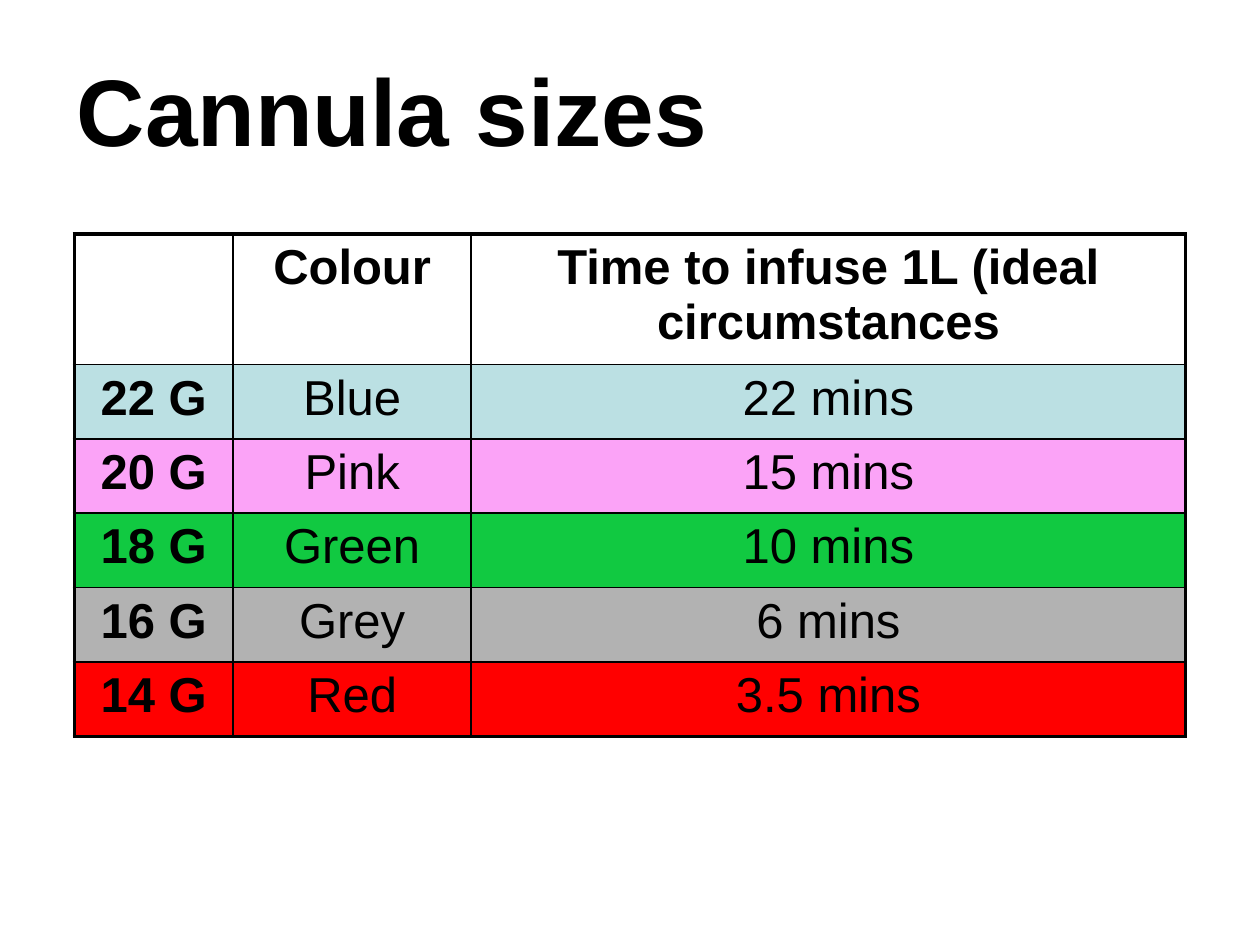
import lxml.etree
import pptx
import pptx.dml.color
import pptx.enum.text
import pptx.oxml.ns
import pptx.util

Pt = pptx.util.Pt
RGBColor = pptx.dml.color.RGBColor
qn = pptx.oxml.ns.qn

BLACK = RGBColor(0x00, 0x00, 0x00)
BLUE = RGBColor(0xBB, 0xE0, 0xE3)
PINK = RGBColor(0xFB, 0xA3, 0xF7)
GREEN = RGBColor(0x11, 0xC9, 0x41)
GREY = RGBColor(0xB2, 0xB2, 0xB2)
RED = RGBColor(0xFF, 0x00, 0x00)

FONT = "Arial"
OUTER_BORDER, INNER_BORDER = 2.25, 1
COLUMN_SHARES = (2, 3, 9)
HEADER_HEIGHT = 74

# Gauge, colour name, infusion time, row fill
CANNULAS = [
    ("", "Colour", "Time to infuse 1L (ideal circumstances", None),
    ("22 G", "Blue", "22 mins", BLUE),
    ("20 G", "Pink", "15 mins", PINK),
    ("18 G", "Green", "10 mins", GREEN),
    ("16 G", "Grey", "6 mins", GREY),
    ("14 G", "Red", "3.5 mins", RED),
]


def format_text(paragraph, size, bold):
    for run in paragraph.runs:
        run.font.name = FONT
        run.font.size = Pt(size)
        run.font.bold = bold
        run.font.color.rgb = BLACK


def add_border(cell, side, width):
    properties = cell._tc.get_or_add_tcPr()
    line = lxml.etree.SubElement(properties, qn("a:ln" + side), w=str(Pt(width)))
    fill = lxml.etree.SubElement(line, qn("a:solidFill"))
    lxml.etree.SubElement(fill, qn("a:srgbClr"), val=str(BLACK))


def add_title(slide, left, top, width, height):
    title = slide.shapes.add_textbox(Pt(left), Pt(top), Pt(width), Pt(height))
    frame = title.text_frame
    frame.text = "Cannula sizes"
    frame.word_wrap = True
    frame.margin_right = 0  # leaves room to keep the title on one line
    format_text(frame.paragraphs[0], 54, True)


def add_cannula_table(slide, left, top, width, height):
    last_row, last_column = len(CANNULAS) - 1, len(COLUMN_SHARES) - 1
    table = slide.shapes.add_table(
        last_row + 1, last_column + 1, Pt(left), Pt(top), Pt(width), Pt(height)
    ).table
    table.first_row = table.horz_banding = False

    # Column widths and row heights
    for column, share in zip(table.columns, COLUMN_SHARES):
        column.width = Pt(width * share / sum(COLUMN_SHARES))
    for r, row in enumerate(table.rows):
        row.height = Pt((height - HEADER_HEIGHT) / last_row if r else HEADER_HEIGHT)

    for r, (*texts, row_fill) in enumerate(CANNULAS):
        for c, text in enumerate(texts):
            cell = table.cell(r, c)

            # Borders, heavier around the table
            on_edge = {"L": c == 0, "R": c == last_column,
                       "T": r == 0, "B": r == last_row}
            for side, outer in on_edge.items():
                add_border(cell, side, OUTER_BORDER if outer else INNER_BORDER)

            # Row colour
            if row_fill is None:
                cell.fill.background()
            else:
                cell.fill.solid()
                cell.fill.fore_color.rgb = row_fill

            # Text, bold in the header row and gauge column
            if text:
                paragraph = cell.text_frame.paragraphs[0]
                paragraph.text = text
                paragraph.alignment = pptx.enum.text.PP_ALIGN.CENTER
                format_text(paragraph, 28, r == 0 or c == 0)


def main():
    deck = pptx.Presentation()
    deck.slide_width, deck.slide_height = Pt(720), Pt(540)
    slide = deck.slides.add_slide(deck.slide_layouts[6])
    add_title(slide, 36.9, 26, 380, 72)
    add_cannula_table(slide, 42.5, 133.8, 635, 286.5)
    deck.save("out.pptx")


if __name__ == "__main__":
    main()
